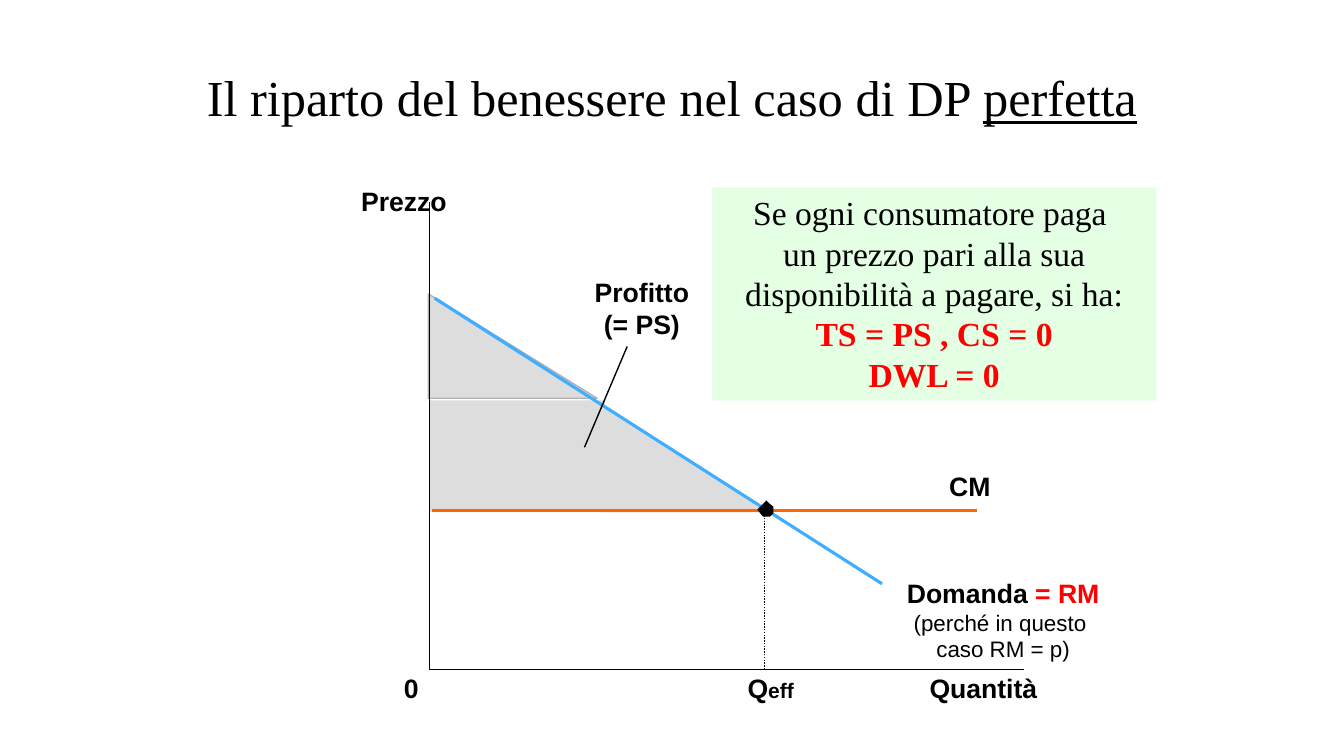
from pptx import Presentation
from pptx.dml.color import RGBColor as Rgb
from pptx.enum.dml import MSO_LINE as Dash
from pptx.enum.shapes import MSO_CONNECTOR as Conn, MSO_SHAPE as Kind
from pptx.enum.text import MSO_ANCHOR as Anchor, MSO_AUTO_SIZE as Fit, PP_ALIGN as Align
from pptx.oxml.ns import qn
from pptx.util import Pt
from lxml.etree import SubElement

INK = {"black": "000000", "red": "FF0000", "orange": "FF6600", "blue": "40AEFF",
       "grey": "DDDDDD", "edge": "B2B2B2", "green": "CCFFCC"}
SERIF, SANS = "Times New Roman", "Arial"


class Sketch:
    def __init__(self, slide):
        self.shapes = slide.shapes

    def tint(self, fill, name, alpha=None):
        fill.solid()
        fill.fore_color.rgb = Rgb.from_string(INK[name])
        if alpha:
            color = fill._xPr.find(qn("a:solidFill"))[0]
            SubElement(color, qn("a:alpha")).set("val", str(alpha * 1000))

    def finish(self, shape, fill=None, edge=None):
        shape.shadow.inherit = False
        if fill:
            self.tint(shape.fill, fill)
        else:
            shape.fill.background()
        if edge:
            self.tint(shape.line.fill, edge)
            shape.line.width = Pt(1)
        else:
            shape.line.fill.background()

    def rect(self, x, y, w, h, fill):
        shape = self.shapes.add_shape(Kind.RECTANGLE, Pt(x), Pt(y), Pt(w), Pt(h))
        self.finish(shape, fill)

    def poly(self, points, fill=None, edge=None, close=True):
        first, *rest = [(Pt(x), Pt(y)) for x, y in points]
        build = self.shapes.build_freeform(*first, scale=1.0)
        build.add_line_segments(rest, close=close)
        self.finish(build.convert_to_shape(), fill, edge)

    def line(self, start, end, color="black", width=1, dash=None):
        link = self.shapes.add_connector(Conn.STRAIGHT, *map(Pt, start + end))
        self.tint(link.line.fill, color)
        link.line.width = Pt(width)
        if dash:
            link.line.dash_style = dash
        SubElement(link._element.spPr, qn("a:effectLst"))

    def text(self, x, y, w, h, paras, font=SANS, size=19, align=Align.CENTER,
             pad=(0, 0), wrap=False, bold=True):
        """Each paragraph is a list of runs: (text, changes to the font)."""
        box = self.shapes.add_textbox(Pt(x), Pt(y), Pt(w), Pt(h))
        frame = box.text_frame
        frame.word_wrap = wrap
        frame.auto_size = Fit.NONE if wrap else Fit.SHAPE_TO_FIT_TEXT
        frame.margin_left = frame.margin_right = Pt(pad[0])
        frame.margin_top = frame.margin_bottom = Pt(pad[1])
        for i, runs in enumerate(paras):
            para = frame.paragraphs[0] if i == 0 else frame.add_paragraph()
            para.alignment = align
            for words, style in runs:
                run = para.add_run()
                run.text = words
                face = run.font
                face.name = font
                face.size = Pt(style.get("size", size))
                face.bold = style.get("bold", bold)
                face.underline = style.get("line", False)
                self.tint(face.fill, style.get("color", "black"))
        return box


def main():
    deck = Presentation()
    deck.slide_width, deck.slide_height = Pt(960), Pt(540)
    art = Sketch(deck.slides.add_slide(deck.slide_layouts[6]))

    title = art.text(120, 24, 720, 90,
                     [[("Il riparto del benessere nel caso di DP ", {}),
                       ("perfetta", {"line": True})]],
                     SERIF, 36, pad=(7.2, 3.6), wrap=True, bold=False)
    title.text_frame.vertical_anchor = Anchor.MIDDLE

    # Profit area
    art.poly([(429, 287.5), (429, 366), (547.5, 366)], "grey")
    art.rect(306.5, 286, 125.5, 79.5, "grey")
    art.poly([(306, 284.5), (426.5, 284.5), (306, 210)], "grey", "edge")

    # Labels
    for x, y, w, runs in [
        (258, 132, 62, [("Prezzo", {})]),
        (288.5, 480, 11, [("0", {})]),
        (664, 480, 78, [("Quantità", {})]),
        (534, 480, 38, [("Q", {}), ("eff", {"size": 15})]),
        (678, 336, 30, [("CM", {})]),
    ]:
        art.text(x, y, w, 23, [runs], align=Align.LEFT)
    small = {"size": 16, "bold": False}
    art.text(646.5, 412, 140, 62,
             [[("Domanda ", {}), ("= RM", {"color": "red"})],
              [("(perché in questo ", small)], [("caso RM = p)", small)]])

    # Curves and axes
    art.line((308.5, 364.5), (698, 364.5), "orange", 2.25)
    art.line((310.5, 213), (630, 417), "blue", 2.25)
    art.poly([(306.8, 144), (306.8, 478), (731.5, 478)], edge="black", close=False)
    art.poly([(547.5, 369), (550, 369), (552.5, 366.5), (552.5, 362), (550, 360),
              (547.5, 357.5), (541, 364), (545, 369)], "black")

    art.text(424.5, 197, 68, 46, [[("Profitto", {})], [("(= PS)", {})]])
    art.line((417.5, 319.5), (448, 247.5))
    art.line((546, 366), (546, 478), dash=Dash.ROUND_DOT)

    result = {"color": "red", "bold": True}
    note = art.text(508.5, 133.8, 317.5, 152.5,
                    [[("Se ogni consumatore paga ", {})],
                     [("un prezzo pari alla sua disponibilità a pagare, si ha:", {})],
                     [("TS = PS , CS = 0", result)], [("DWL = 0", result)]],
                    SERIF, 24, pad=(7.2, 3.6), wrap=True, bold=False)
    art.tint(note.fill, "green", 50)

    deck.save("out.pptx")


if __name__ == "__main__":
    main()
